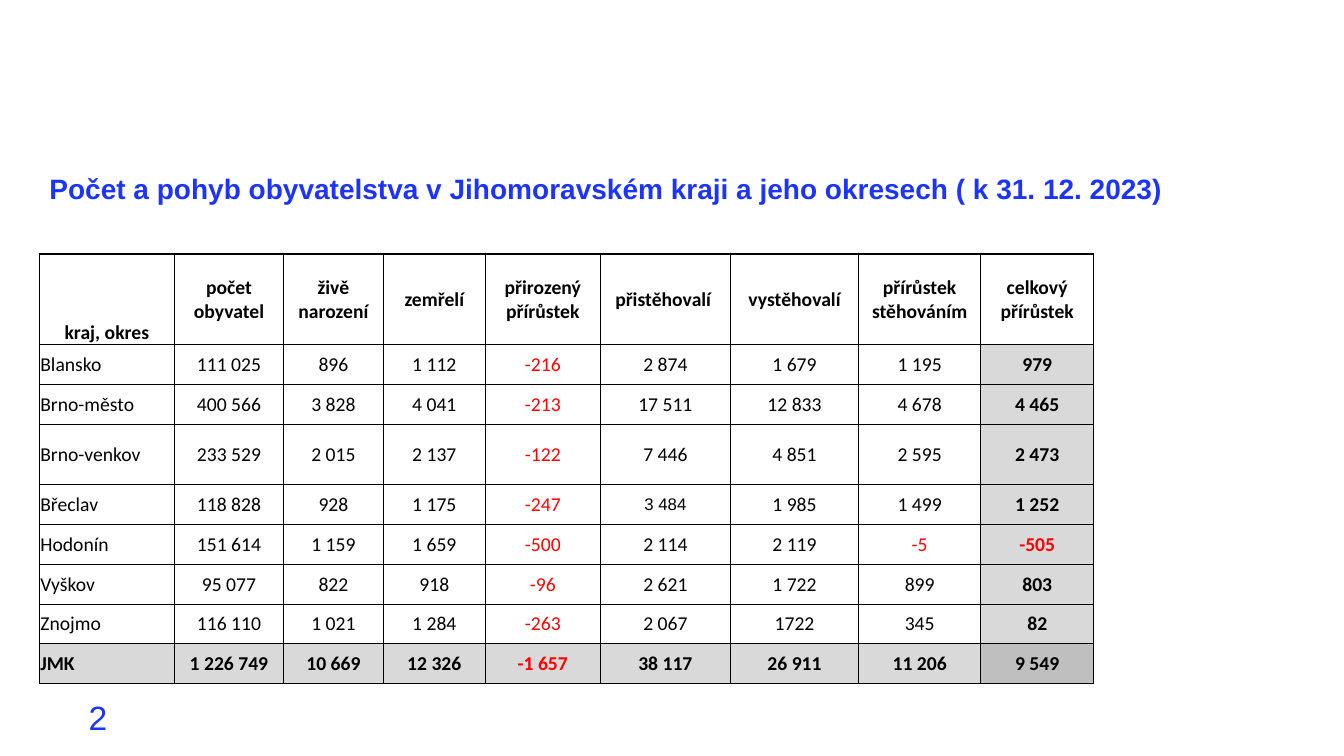
from dataclasses import dataclass

from lxml.etree import SubElement
from pptx import Presentation
from pptx.dml.color import RGBColor
from pptx.enum.text import MSO_ANCHOR, PP_ALIGN
from pptx.oxml.ns import qn
from pptx.util import Inches, Pt


@dataclass(frozen=True)
class Theme:
    heading_font: str = "Arial"
    table_font: str = "Calibri"
    blue: str = "1D34FD"
    black: str = "000000"
    red: str = "FF0000"
    white: str = "FFFFFF"
    light_gray: str = "D9D9D9"
    dark_gray: str = "BFBFBF"
    title_size: int = 20
    number_size: int = 24
    table_size: int = 14
    small_size: int = 12
    thin_line: float = 0.5
    thick_line: float = 1


THEME = Theme()

TITLE = "Počet a pohyb obyvatelstva v Jihomoravském kraji a jeho okresech ( k 31. 12. 2023)"
POPULATION = [
    ["kraj, okres", "počet obyvatel", "živě narození", "zemřelí", "přirozený přírůstek",
     "přistěhovalí ", "vystěhovalí", "přírůstek stěhováním", "celkový přírůstek"],
    ["Blansko", "111 025", "896", "1 112", "-216", "2 874", "1 679", "1 195", "979"],
    ["Brno-město", "400 566", "3 828", "4 041", "-213", "17 511", "12 833", "4 678", "4 465"],
    ["Brno-venkov", "233 529", "2 015", "2 137", "-122", "7 446", "4 851", "2 595", "2 473"],
    ["Břeclav", "118 828", "928", "1 175", "-247", "3 484", "1 985", "1 499", "1 252"],
    ["Hodonín", "151 614", "1 159", "1 659", "-500", "2 114", "2 119", "-5", "-505"],
    ["Vyškov", "95 077", "822", "918", "-96", "2 621", "1 722", "899", "803"],
    ["Znojmo", "116 110", "1 021", "1 284", "-263", "2 067", "1722", "345", "82"],
    ["JMK", "1 226 749", "10 669", "12 326", "-1 657", "38 117", "26 911", "11 206", "9 549"],
]
COLUMN_WIDTHS = [1.34, 1.08, 0.99, 1.01, 1.14, 1.29, 1.27, 1.21, 1.12]
HEADER_HEIGHT = 0.9
TALL_ROW, TALL_HEIGHT = 3, 0.6
SMALL_CELL = (4, 5)
LAST_ROW = len(POPULATION) - 1
LAST_COLUMN = len(COLUMN_WIDTHS) - 1


def format_text(paragraph, font_name, size, color, bold=False):
    for run in paragraph.runs:
        run.font.name = font_name
        run.font.size = Pt(size)
        run.font.bold = bold
        run.font.color.rgb = RGBColor.from_string(color)


def place_title(slide, left, top, width, height):
    title = slide.shapes.title
    title.left, title.top = Inches(left), Inches(top)
    title.width, title.height = Inches(width), Inches(height)
    text_frame = title.text_frame
    text_frame.text = TITLE
    text_frame.vertical_anchor = MSO_ANCHOR.MIDDLE
    paragraph = text_frame.paragraphs[0]
    paragraph.alignment = PP_ALIGN.LEFT
    paragraph.line_spacing = 0.9
    format_text(paragraph, THEME.heading_font, THEME.title_size, THEME.blue, True)


def place_slide_number(slide, left, top, width, height):
    box = slide.shapes.add_textbox(Inches(left), Inches(top), Inches(width), Inches(height))
    text_frame = box.text_frame
    text_frame.word_wrap = True
    text_frame.text = "2"
    text_frame.vertical_anchor = MSO_ANCHOR.MIDDLE
    format_text(text_frame.paragraphs[0], THEME.heading_font, THEME.number_size, THEME.blue)


def border_cell(cell, row, column):
    thick_rows = (0, 1, LAST_ROW, LAST_ROW + 1)
    thick_columns = (0, LAST_COLUMN, LAST_COLUMN + 1) + ((1,) if row < LAST_ROW else ())
    sides = {
        "a:lnL": column in thick_columns,
        "a:lnR": column + 1 in thick_columns,
        "a:lnT": row in thick_rows,
        "a:lnB": row + 1 in thick_rows,
    }
    properties = cell._tc.get_or_add_tcPr()
    for position, (side, thick) in enumerate(sides.items()):
        line = SubElement(properties, qn(side))
        line.set("w", str(Pt(THEME.thick_line if thick else THEME.thin_line)))
        fill = SubElement(line, qn("a:solidFill"))
        SubElement(fill, qn("a:srgbClr")).set("val", THEME.black)
        properties.insert(position, line)


def fill_color(row, column):
    if row == LAST_ROW and column == LAST_COLUMN:
        return THEME.dark_gray
    if row == LAST_ROW or (row > 0 and column == LAST_COLUMN):
        return THEME.light_gray
    return THEME.white


def format_cell(cell, row, column, text):
    cell.margin_left = cell.margin_top = cell.margin_right = Inches(0.01)
    cell.margin_bottom = 0
    corner = row == column == 0
    cell.vertical_anchor = MSO_ANCHOR.BOTTOM if corner else MSO_ANCHOR.MIDDLE
    cell.fill.solid()
    cell.fill.fore_color.rgb = RGBColor.from_string(fill_color(row, column))
    border_cell(cell, row, column)
    cell.text_frame.text = text
    paragraph = cell.text_frame.paragraphs[0]
    paragraph.alignment = PP_ALIGN.LEFT if column == 0 and row > 0 else PP_ALIGN.CENTER
    small = (row, column) == SMALL_CELL
    format_text(
        paragraph,
        THEME.heading_font if small else THEME.table_font,
        THEME.small_size if small else THEME.table_size,
        THEME.red if text.startswith("-") else THEME.black,
        row in (0, LAST_ROW) or column == LAST_COLUMN,
    )


def place_population_table(slide, left, top, width, height):
    table = slide.shapes.add_table(
        len(POPULATION), len(COLUMN_WIDTHS),
        Inches(left), Inches(top), Inches(width), Inches(height),
    ).table
    table.horz_banding = False
    scale = width / sum(COLUMN_WIDTHS)
    for column, column_width in zip(table.columns, COLUMN_WIDTHS):
        column.width = Inches(column_width * scale)
    row_height = (height - HEADER_HEIGHT - TALL_HEIGHT) / (len(POPULATION) - 2)
    special_heights = {0: HEADER_HEIGHT, TALL_ROW: TALL_HEIGHT}
    for row, values in enumerate(POPULATION):
        table.rows[row].height = Inches(special_heights.get(row, row_height))
        for column, text in enumerate(values):
            format_cell(table.cell(row, column), row, column, text)


def main():
    presentation = Presentation()
    presentation.slide_width = Inches(13.33)
    presentation.slide_height = Inches(7.5)
    slide = presentation.slides.add_slide(presentation.slide_layouts[5])
    place_slide_number(slide, 0.78, 6.91, 3, 0.4)
    place_title(slide, 0.39, 1.52, 11.96, 0.73)
    place_population_table(slide, 0.39, 2.52, 10.46, 4.26)
    presentation.save("out.pptx")


if __name__ == "__main__":
    main()
